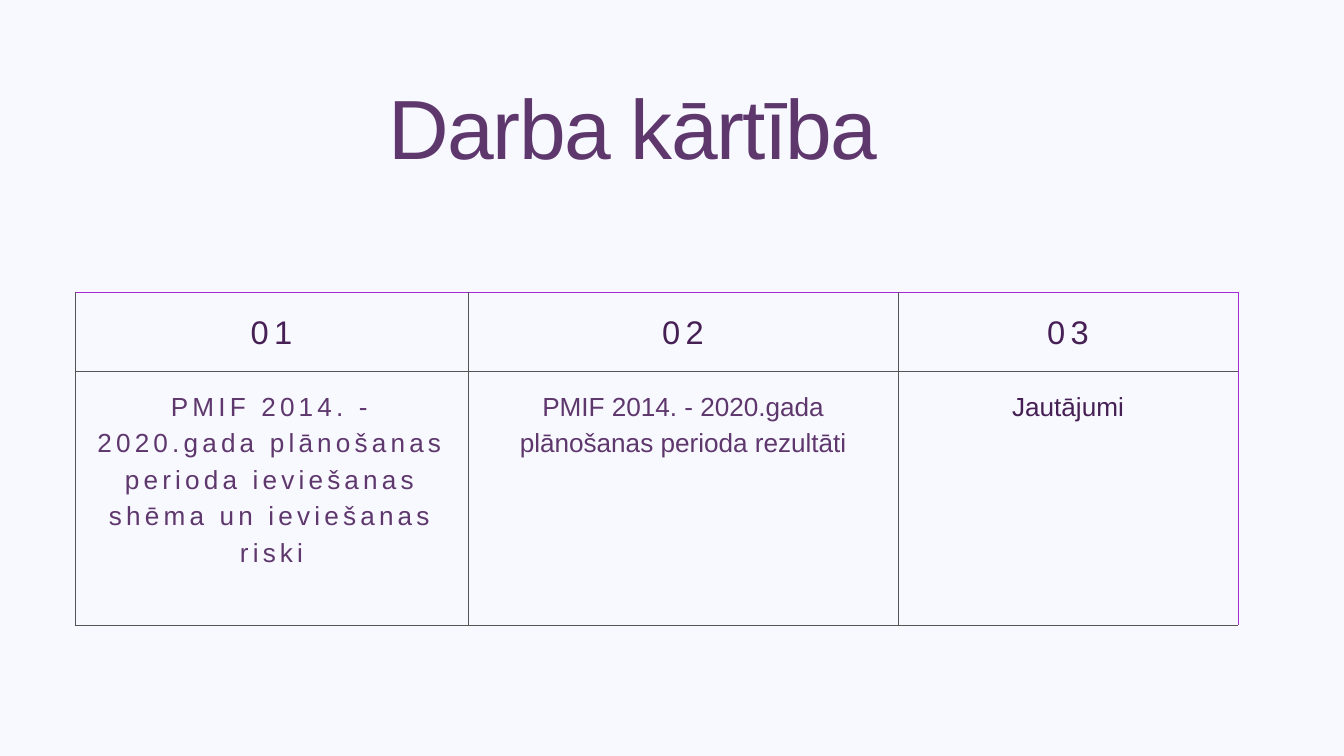
from pptx import Presentation
from pptx.dml.color import RGBColor
from pptx.enum.text import MSO_ANCHOR, PP_ALIGN
from pptx.oxml.ns import qn
from pptx.util import Emu, Pt
from lxml import etree

CENTER, LEFT, TOP = PP_ALIGN.CENTER, PP_ALIGN.LEFT, MSO_ANCHOR.TOP

COLORS = {
    "background": "F8F8FF",
    "dark": "462054",
    "plum": "5E376D",
    "frame": "A52BD4",
    "grid": "555555",
}
TITLE = "Darba kārtība"
AGENDA = [
    ("01", "PMIF 2014. - 2020.gada plānošanas perioda ieviešanas shēma un ieviešanas riski", "plum", 4.5),
    ("02", "PMIF 2014. - 2020.gada plānošanas perioda rezultāti", "plum", 0),
    ("03", "Jautājumi", "dark", 0),
]
COLUMN_WIDTHS = [393, 430, 237, 103]
ROW_HEIGHTS = [79, 254]
TABLE_LEFT, TABLE_TOP = 75, 292
CELL_MARGIN = 14


def px(length):
    return Emu(round(length * 914400 / 67.2))


def rgb(name):
    return RGBColor.from_string(COLORS[name])


def write(paragraph, text, size, color, tracking, leading, align):
    run = paragraph.add_run()
    run.text = text
    run._r.get_or_add_rPr().set("spc", str(round(tracking * 100)))
    paragraph.alignment = align
    paragraph.line_spacing = Pt(leading)
    font = paragraph.font
    font.name, font.size, font.bold = "Arial", Pt(size), False
    font.color.rgb = rgb(color)


def add_borders(cell, sides):
    properties = cell._tc.get_or_add_tcPr()
    for side, color in sides.items():
        line = etree.SubElement(properties, qn(f"a:ln{side}"), w=str(Pt(0.75)))
        fill = etree.SubElement(line, qn("a:solidFill"))
        etree.SubElement(fill, qn("a:srgbClr"), val=COLORS[color])


prs = Presentation()
prs.slide_width, prs.slide_height = px(1344), px(756)
slide = prs.slides.add_slide(prs.slide_layouts[6])
slide.background.fill.solid()
slide.background.fill.fore_color.rgb = rgb("background")

table = slide.shapes.add_table(
    len(ROW_HEIGHTS), len(COLUMN_WIDTHS), px(TABLE_LEFT), px(TABLE_TOP),
    px(sum(COLUMN_WIDTHS)), px(sum(ROW_HEIGHTS))).table
table.first_row = table.horz_banding = False
for column, width in zip(table.columns, COLUMN_WIDTHS):
    column.width = px(width)
for row, height in zip(table.rows, ROW_HEIGHTS):
    row.height = px(height)

last_agenda_column = len(AGENDA) - 1
for r in range(len(ROW_HEIGHTS)):
    for c in range(len(COLUMN_WIDTHS)):
        cell = table.cell(r, c)
        add_borders(cell, {
            "L": "grid",
            "R": "frame" if c >= last_agenda_column else "grid",
            "T": "frame" if r == 0 else "grid",
            "B": "grid",
        })
        cell.fill.background()
        cell.vertical_anchor = TOP
        cell.margin_left = cell.margin_right = px(CELL_MARGIN)
        cell.margin_top = cell.margin_bottom = px(CELL_MARGIN)
    table.cell(r, last_agenda_column).merge(table.cell(r, len(COLUMN_WIDTHS) - 1))

for c, (number, topic, color, tracking) in enumerate(AGENDA):
    write(table.cell(0, c).text_frame.paragraphs[0], number, 35, "dark", 5.6, 49, CENTER)
    write(table.cell(1, c).text_frame.paragraphs[0], topic, 28, color, tracking, 39.2, CENTER)

title = slide.shapes.add_textbox(px(389), px(75), px(849), px(102)).text_frame
title.word_wrap = True
title.margin_left = title.margin_right = title.margin_top = title.margin_bottom = 0
write(title.paragraphs[0], TITLE, 90, "plum", -1.8, 108, LEFT)

prs.save("out.pptx")
